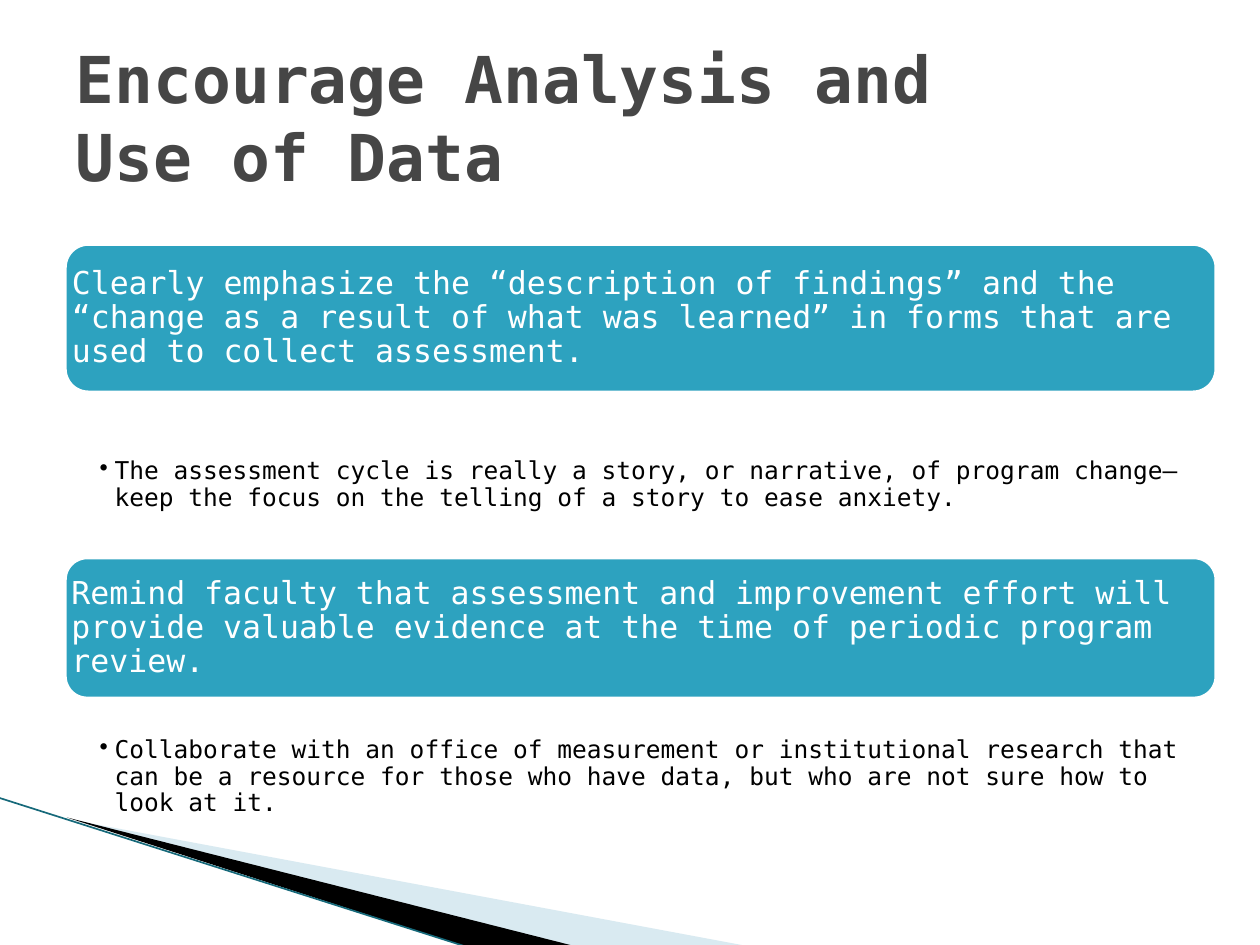
import pptx
import pptx.dml.color
import pptx.enum.shapes
import pptx.enum.text
import pptx.oxml.ns
import pptx.util
from lxml import etree

Cm = pptx.util.Cm
Pt = pptx.util.Pt
RGBColor = pptx.dml.color.RGBColor
MSO_ANCHOR = pptx.enum.text.MSO_ANCHOR
qn = pptx.oxml.ns.qn

WHITE = RGBColor(0xFF, 0xFF, 0xFF)
BLACK = RGBColor(0x00, 0x00, 0x00)
GREY = RGBColor(0x46, 0x46, 0x46)
TEAL = RGBColor(0x2D, 0xA2, 0xBF)
DARK_TEAL = RGBColor(0x16, 0x69, 0x7A)
PALE_BLUE = RGBColor(0xA0, 0xCB, 0xDC)

FONT = "DejaVu Sans Mono"
LEFT, WIDTH = Cm(1.27), Cm(23.29)
DETAIL_HEIGHT = Cm(2.72)

SECTIONS = [
    (4.88, 3.07,
     "Clearly emphasize the “description of findings” and the “change as a "
     "result of what was learned” in forms that are used to collect assessment.",
     8.48,
     "The assessment cycle is really a story, or narrative, of program "
     "change—keep the focus on the telling of a story to ease anxiety."),
    (11.2, 2.92,
     "Remind faculty that assessment and improvement effort will provide "
     "valuable evidence at the time of periodic program review.",
     14.1,
     "Collaborate with an office of measurement or institutional research that "
     "can be a resource for those who have data, but who are not sure how to "
     "look at it."),
]


def write_text(shape, text, *, size, color, bold=False, bullet=False,
               spacing=None, anchor=MSO_ANCHOR.MIDDLE, margins=None):
    """Write one formatted, left-aligned paragraph into a shape."""
    frame = shape.text_frame
    frame.word_wrap = True
    frame.auto_size = pptx.enum.text.MSO_AUTO_SIZE.NONE
    frame.vertical_anchor = anchor
    if margins:
        (frame.margin_left, frame.margin_top,
         frame.margin_right, frame.margin_bottom) = map(Cm, margins)
    paragraph = frame.paragraphs[0]
    paragraph.text = text
    paragraph.alignment = pptx.enum.text.PP_ALIGN.LEFT
    if spacing:
        paragraph.line_spacing = spacing
    if bullet:
        properties = paragraph._p.get_or_add_pPr()
        properties.set("marL", str(Cm(0.3)))
        properties.set("indent", str(-Cm(0.3)))
        etree.SubElement(properties, qn("a:buChar")).set("char", "•")
    for run in paragraph.runs:
        run.font.name = FONT
        run.font.size = Pt(size)
        run.font.bold = bold
        run.font.color.rgb = color


def add_wedge(slide, points, color, opacity=100):
    """Add a filled polygon through points given in centimetres."""
    start, *others = [(Cm(x), Cm(y)) for x, y in points]
    builder = slide.shapes.build_freeform(*start)
    builder.add_line_segments(others)
    shape = builder.convert_to_shape()
    shape.shadow.inherit = False
    shape.line.fill.background()
    shape.fill.solid()
    shape.fill.fore_color.rgb = color
    if opacity < 100:
        color_element = shape._element.spPr.find(
            qn("a:solidFill") + "/" + qn("a:srgbClr"))
        etree.SubElement(color_element, qn("a:alpha")).set(
            "val", str(opacity * 1000))


def add_edge_line(slide):
    """Add the thin line that edges the corner wedges."""
    connector = slide.shapes.add_connector(
        pptx.enum.shapes.MSO_CONNECTOR.STRAIGHT,
        Cm(-0.03), Cm(16.08), Cm(9.45), Cm(19.1))
    connector.line.color.rgb = DARK_TEAL
    connector.line.width = Pt(0.95)
    etree.SubElement(connector._element.spPr, qn("a:effectLst"))


def add_banner(slide, top, height, text):
    """Add a rounded teal banner with its statement."""
    shape = slide.shapes.add_shape(
        pptx.enum.shapes.MSO_SHAPE.ROUNDED_RECTANGLE,
        LEFT, Cm(top), WIDTH, Cm(height))
    shape.shadow.inherit = False
    shape.fill.solid()
    shape.fill.fore_color.rgb = TEAL
    shape.line.color.rgb = WHITE
    shape.line.width = Pt(4.33)
    write_text(shape, text, size=18, color=WHITE, spacing=0.9,
               margins=(0.03, 0.03, 0.03, 0.03))


def add_detail(slide, top, text):
    """Add the bulleted detail below a banner."""
    box = slide.shapes.add_textbox(LEFT, Cm(top), WIDTH, DETAIL_HEIGHT)
    write_text(box, text, size=14, color=BLACK, bullet=True, spacing=0.9,
               anchor=MSO_ANCHOR.TOP, margins=(0.74, 0.77, 0.36, 0.08))


def set_title(slide, text):
    """Place and format the title placeholder."""
    title = slide.shapes.title
    title.left, title.top = Cm(1.27), Cm(0.76)
    title.width, title.height = Cm(22.86), Cm(3.18)
    write_text(title, text, size=36.9, color=GREY, bold=True)


def main():
    """Build the slide and save it."""
    presentation = pptx.Presentation()
    presentation.slide_width = Cm(25.4)
    presentation.slide_height = Cm(19.05)
    slide = presentation.slides.add_slide(presentation.slide_layouts[5])
    add_wedge(slide, [(1.4, 16.52), (15.11, 19.08), (11.58, 19.08)],
              PALE_BLUE, opacity=40)
    add_wedge(slide, [(1.35, 16.48), (11.61, 19.08), (9.45, 19.1)], BLACK)
    add_edge_line(slide)
    set_title(slide, "Encourage Analysis and \vUse of Data")
    for banner_top, banner_height, statement, detail_top, detail in SECTIONS:
        add_banner(slide, banner_top, banner_height, statement)
        add_detail(slide, detail_top, detail)
    presentation.save("out.pptx")


if __name__ == "__main__":
    main()
